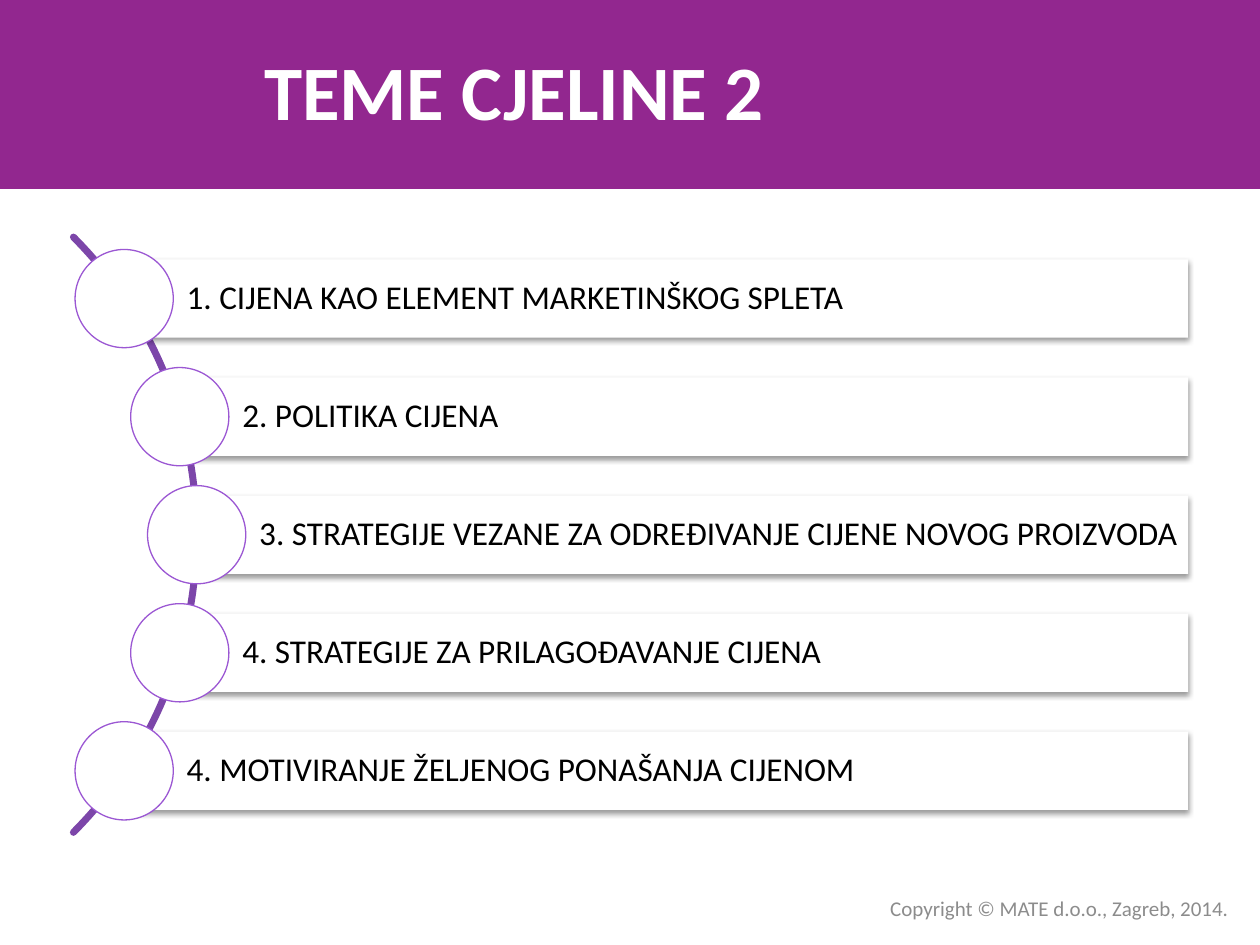
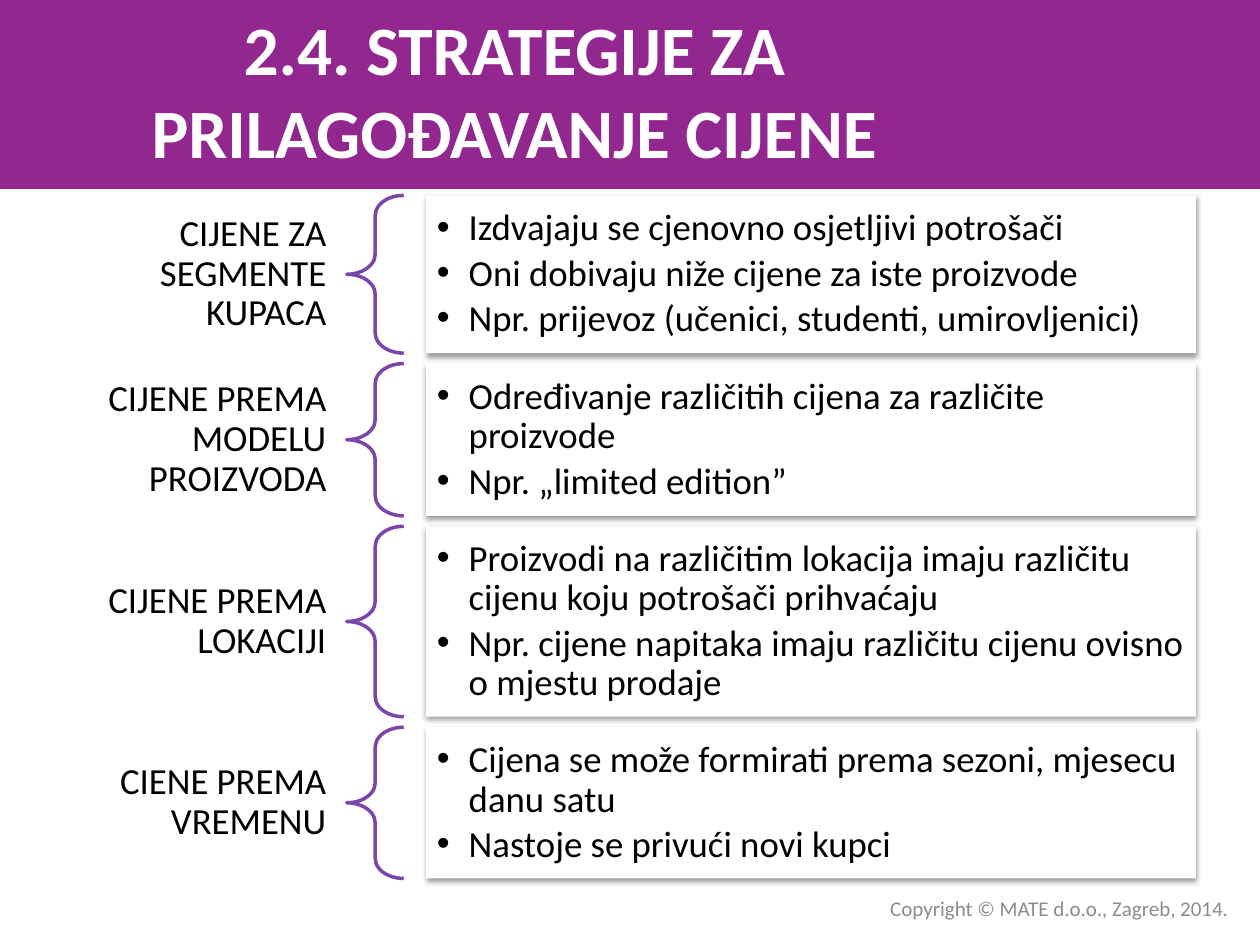
import math
from lxml import etree
from pptx import Presentation
from pptx.dml.color import RGBColor
from pptx.enum.shapes import MSO_SHAPE
from pptx.enum.text import MSO_ANCHOR, MSO_AUTO_SIZE, PP_ALIGN
from pptx.oxml import parse_xml
from pptx.oxml.ns import nsdecls, qn
from pptx.util import Cm, Pt

RECT, OVAL, BRACE = MSO_SHAPE.RECTANGLE, MSO_SHAPE.OVAL, MSO_SHAPE.LEFT_BRACE
LEFT, CENTER, RIGHT = PP_ALIGN.LEFT, PP_ALIGN.CENTER, PP_ALIGN.RIGHT
MIDDLE, NO_FIT = MSO_ANCHOR.MIDDLE, MSO_AUTO_SIZE.NONE
BAND, CURVE, RING = "92278F", "7C46A9", "9B57D3"
WHITE, BLACK, GREY = "FFFFFF", "000000", "8C8C8C"
FONT = "Calibri"
TITLE_ONLY = 5

TOPICS = [
    "1. CIJENA KAO ELEMENT MARKETINŠKOG SPLETA",
    "2. POLITIKA CIJENA",
    "3. STRATEGIJE VEZANE ZA ODREĐIVANJE CIJENE NOVOG PROIZVODA",
    "4. STRATEGIJE ZA PRILAGOĐAVANJE CIJENA",
    "4. MOTIVIRANJE ŽELJENOG PONAŠANJA CIJENOM",
]
STRATEGIES = [
    (3.18, "CIJENE ZA SEGMENTE KUPACA", [
        "Izdvajaju se cjenovno osjetljivi potrošači",
        "Oni dobivaju niže cijene za iste proizvode",
        "Npr. prijevoz (učenici, studenti, umirovljenici)"]),
    (3.07, "CIJENE PREMA MODELU PROIZVODA", [
        "Određivanje različitih cijena za različite proizvode",
        "Npr. „limited edition”"]),
    (3.84, "CIJENE PREMA LOKACIJI", [
        "Proizvodi na različitim lokacija imaju različitu cijenu koju potrošači prihvaćaju",
        "Npr. cijene napitaka imaju različitu cijenu ovisno o mjestu prodaje"]),
    (3.05, "CIENE PREMA VREMENU", [
        "Cijena se može formirati prema sezoni, mjesecu danu satu",
        "Nastoje se privući novi kupci"]),
]


def rgb(color):
    return RGBColor.from_string(color)


def add_bullet(p):
    pPr = p._p.get_or_add_pPr()
    pPr.set("marL", str(Cm(0.64)))
    pPr.set("indent", str(-Cm(0.64)))
    etree.SubElement(pPr, qn("a:buFont")).set("typeface", "Arial")
    etree.SubElement(pPr, qn("a:buChar")).set("char", "•")


def write(sp, lines, size, color=BLACK, align=LEFT, bold=False, spacing=None,
          after=0, bullets=False, insets=(0.25, 0.13, 0.25, 0.13)):
    tf = sp.text_frame
    tf.word_wrap, tf.auto_size, tf.vertical_anchor = True, NO_FIT, MIDDLE
    tf.margin_left, tf.margin_top, tf.margin_right, tf.margin_bottom = map(Cm, insets)
    for i, line in enumerate(lines):
        p = tf.add_paragraph() if i else tf.paragraphs[0]
        if bullets:
            add_bullet(p)
        p.alignment, p.line_spacing, p.space_after = align, spacing, Pt(after)
        r = p.add_run()
        r.text = line
        r.font.name, r.font.size, r.font.bold = FONT, Pt(size), bold
        r.font.color.rgb = rgb(color)


def style(sp, fill=None, line=None, width=1):
    sp.shadow.inherit = False
    if fill:
        sp.fill.solid()
        sp.fill.fore_color.rgb = rgb(fill)
    else:
        sp.fill.background()
    if line:
        sp.line.color.rgb = rgb(line)
        sp.line.width = Pt(width)
    else:
        sp.line.fill.background()


def add_shape(s, kind, x, y, w, h, **look):
    sp = s.shapes.add_shape(kind, Cm(x), Cm(y), Cm(w), Cm(h))
    style(sp, **look)
    return sp


def add_card(s, x, y, w, h):
    sp = add_shape(s, RECT, x, y, w, h, fill=WHITE)
    sp.element.spPr.find(qn("a:effectLst")).append(parse_xml(
        f'<a:outerShdw {nsdecls("a")} blurRad="40000" dist="20000" dir="5400000" rotWithShape="0">'
        '<a:srgbClr val="000000"><a:alpha val="38000"/></a:srgbClr></a:outerShdw>'))
    return sp


def add_textbox(s, x, y, w, h, text, **fmt):
    write(s.shapes.add_textbox(Cm(x), Cm(y), Cm(w), Cm(h)), [text], **fmt)


def new_slide(prs, title, size):
    s = prs.slides.add_slide(prs.slide_layouts[TITLE_ONLY])
    band = add_shape(s, RECT, 0, 0, 25.4, 3.81, fill=BAND)
    s.element.cSld.spTree.insert(2, band.element)
    sp = s.shapes.title
    sp.left, sp.top, sp.width, sp.height = Cm(0), Cm(0.21), Cm(20.74), Cm(3.18)
    write(sp, [title], size, color=WHITE, align=CENTER, bold=True)
    add_textbox(s, 11.9, 17.93, 13.12, 0.76, "Copyright © MATE d.o.o., Zagreb, 2014.",
                size=12, color=GREY, align=RIGHT)
    return s


def add_arc(s, cx, cy, radius):
    points = [(Cm(cx + radius * math.cos(math.radians(a))),
               Cm(cy + radius * math.sin(math.radians(a)))) for a in range(-45, 46)]
    builder = s.shapes.build_freeform(*points[0])
    builder.add_line_segments(points[1:], close=False)
    arc = builder.convert_to_shape()
    style(arc, line=CURVE, width=4)
    arc.element.spPr.find(qn("a:ln")).set("cap", "rnd")


def topics_diagram(s, x, y, w, h):
    bar, ring, pitch = 1.58, 1.98, 2.38
    cx, cy, radius = x - h / 2, y + h / 2, h / math.sqrt(2)
    add_arc(s, cx, cy, radius)
    for i, topic in enumerate(TOPICS):
        dy = (i - (len(TOPICS) - 1) / 2) * pitch
        ring_x = cx + math.sqrt(radius ** 2 - dy ** 2)
        sp = add_card(s, ring_x, cy + dy - bar / 2, x + w - ring_x, bar)
        write(sp, [topic], 19, spacing=0.9, insets=(1.26, 0.12, 0.12, 0.12))
        add_shape(s, OVAL, ring_x - ring / 2, cy + dy - ring / 2, ring, ring,
                  fill=WHITE, line=RING, width=0.75)


def strategy_row(s, x, y, w, h, label, points):
    label_w, brace_w, gap = 5.72, 1.15, 0.45
    add_textbox(s, x, y, label_w, h, label, size=21, align=RIGHT, spacing=0.9,
                insets=(0.41, 0.15, 0.41, 0.15))
    brace = add_shape(s, BRACE, x + label_w, y, brace_w, h, line=CURVE, width=2)
    brace.adjustments[0] = 0.35
    card_x = label_w + brace_w + gap
    card = add_card(s, x + card_x, y, w - card_x, h)
    write(card, points, 21, spacing=0.9, after=3.15, bullets=True, insets=(0.22,) * 4)


def strategies_diagram(s, x, y, w, gap):
    for h, label, points in STRATEGIES:
        strategy_row(s, x, y, w, h, label, points)
        y += h + gap


def main():
    prs = Presentation()
    prs.slide_width, prs.slide_height = Cm(25.4), Cm(19.05)
    s = new_slide(prs, "TEME CJELINE 2", 44)
    topics_diagram(s, 1.48, 4.78, 22.47, 12)
    s = new_slide(prs, "2.4. STRATEGIJE ZA PRILAGOĐAVANJE CIJENE", 39.6)
    strategies_diagram(s, 1.27, 3.94, 22.84, 0.21)
    prs.save("out.pptx")


if __name__ == "__main__":
    main()
